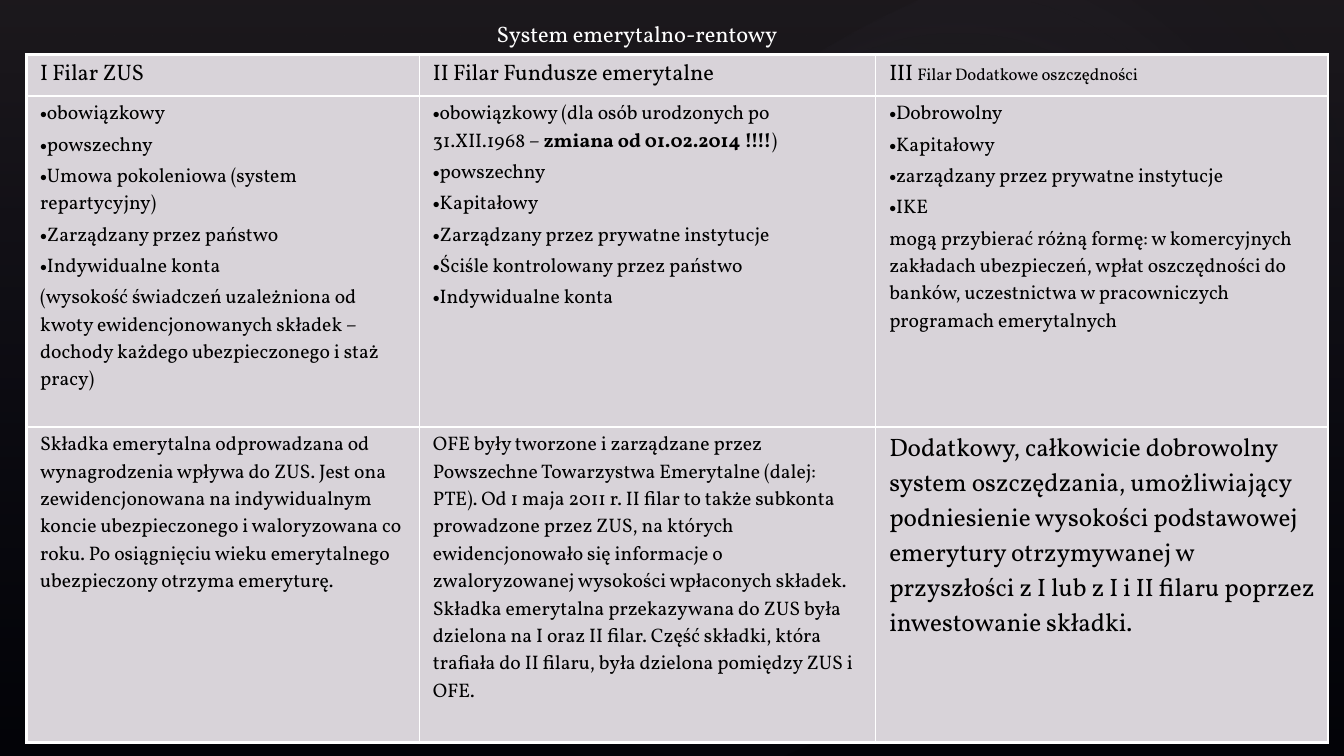
from lxml.etree import SubElement
from pptx import Presentation
from pptx.dml.color import RGBColor
from pptx.enum.shapes import MSO_SHAPE as Shape
from pptx.enum.text import MSO_ANCHOR as Anchor, MSO_AUTO_SIZE as Fit, PP_ALIGN as Align
from pptx.oxml.ns import qn
from pptx.util import Cm, Pt

FONT = "Vollkorn"
WHITE = RGBColor(0xFF, 0xFF, 0xFF)
BLACK = RGBColor(0x00, 0x00, 0x00)
PANEL = RGBColor(0xD8, 0xD3, 0xD9)
DUSK = RGBColor(0x50, 0x46, 0x52)
NAVY = RGBColor(0x24, 0x28, 0x52)
MIST = RGBColor(0xC4, 0xBC, 0xC6)

WIDE, HIGH = 33.87, 19.05
TITLE = "System emerytalno-rentowy"
COLS = [9.9, 11.5, 11.4]
ROWS = [1.05, 8.34, 7.95]
BULLET = "•"

# Each glow: left, top, width, height, rotation, opacity of its centre
GLOWS = [
    (5.08, 2.9, 26.82, 15.85, 328.7, 7),
    (1.55, 1.17, 15.39, 16.59, 294.3, 8),
    (12.14, 0.33, 24, 13.21, 328.7, 8),
]

# Each cell: text size, then its paragraphs; a paragraph is a text
# or a list of (text, font settings) runs.
CELLS = [
    [
        (16, ["I Filar ZUS"]),
        (16, ["II Filar Fundusze emerytalne"]),
        (16, [[("III ", {}), ("Filar Dodatkowe oszczędności", {"size": Pt(12)})]]),
    ],
    [
        (14, [
            "•obowiązkowy",
            "•powszechny",
            "•Umowa pokoleniowa (system repartycyjny)",
            "•Zarządzany przez państwo",
            "•Indywidualne konta",
            "(wysokość świadczeń uzależniona od kwoty ewidencjonowanych składek – "
            "dochody każdego ubezpieczonego i staż pracy)",
        ]),
        (14, [
            [("•obowiązkowy (dla osób urodzonych po 31.XII.1968 – ", {}),
             ("zmiana od 01.02.2014 !!!!", {"bold": True}), (")", {})],
            "•powszechny",
            "•Kapitałowy",
            "•Zarządzany przez prywatne instytucje",
            "•Ściśle kontrolowany przez państwo",
            "•Indywidualne konta",
        ]),
        (14, [
            "•Dobrowolny",
            "•Kapitałowy",
            "•zarządzany przez prywatne instytucje",
            "•IKE",
            "mogą przybierać różną formę: w komercyjnych zakładach ubezpieczeń, "
            "wpłat oszczędności do banków, uczestnictwa w pracowniczych "
            "programach emerytalnych",
        ]),
    ],
    [
        (14, [
            "Składka emerytalna odprowadzana od wynagrodzenia wpływa do ZUS. "
            "Jest ona zewidencjonowana na indywidualnym koncie ubezpieczonego "
            "i waloryzowana co roku. Po osiągnięciu wieku emerytalnego "
            "ubezpieczony otrzyma emeryturę.",
        ]),
        (14, [
            "OFE były tworzone i zarządzane przez Powszechne Towarzystwa "
            "Emerytalne (dalej: PTE). Od 1 maja 2011 r. II filar to także "
            "subkonta prowadzone przez ZUS, na których ewidencjonowało się "
            "informacje o zwaloryzowanej wysokości wpłaconych składek. Składka "
            "emerytalna przekazywana do ZUS była dzielona na I oraz II filar. "
            "Część składki, która trafiała do II filaru, była dzielona "
            "pomiędzy ZUS i OFE.",
        ]),
        (18, [
            "Dodatkowy, całkowicie dobrowolny system oszczędzania, "
            "umożliwiający podniesienie wysokości podstawowej emerytury "
            "otrzymywanej w przyszłości z I lub z I i II filaru poprzez "
            "inwestowanie składki.",
        ]),
    ],
]


def set_font(font, size, color):
    font.name, font.size, font.color.rgb = FONT, Pt(size), color


def add_haze(slide, kind, box, stops):
    """Add a borderless shape with a see-through gradient of (place, colour, opacity)."""
    shape = slide.shapes.add_shape(kind, *map(Cm, box))
    shape.shadow.inherit = False
    shape.line.fill.background()
    shape.fill.gradient()
    grad = shape._element.spPr.find(qn("a:gradFill"))
    for part in list(grad):
        grad.remove(part)
    group = SubElement(grad, qn("a:gsLst"))
    for place, color, alpha in stops:
        stop = SubElement(group, qn("a:gs"), pos=str(place * 1000))
        tint = SubElement(stop, qn("a:srgbClr"), val=str(color))
        SubElement(tint, qn("a:alpha"), val=str(alpha * 1000))
    if kind == Shape.OVAL:
        way = SubElement(grad, qn("a:path"), path="circle")
        SubElement(way, qn("a:fillToRect"), dict.fromkeys("ltrb", "50000"))
    else:
        SubElement(grad, qn("a:lin"), ang="5400000", scaled="0")
    return shape


def paint_back(slide):
    fill = slide.background.fill
    fill.solid()
    fill.fore_color.rgb = BLACK
    add_haze(slide, Shape.RECTANGLE, (0, 0, WIDE, HIGH), [(0, DUSK, 36), (100, NAVY, 10)])
    for *box, turn, alpha in GLOWS:
        glow = add_haze(slide, Shape.OVAL, box, [(0, MIST, alpha), (58, NAVY, 0)])
        glow.rotation = turn


def add_title(slide):
    title = slide.shapes.title
    slide.shapes._spTree.append(title._element)
    title.left, title.top, title.width, title.height = Cm(3.33), Cm(0.31), Cm(25.45), Cm(1)
    frame = title.text_frame
    frame.auto_size, frame.vertical_anchor = Fit.NONE, Anchor.BOTTOM
    frame.text = TITLE
    para = frame.paragraphs[0]
    para.alignment = Align.CENTER
    set_font(para.font, 16, WHITE)


def add_para(para, runs, size, first):
    if isinstance(runs, str):
        runs = [(runs, {})]
    if runs[0][0].startswith(BULLET):
        props = para._p.get_or_add_pPr()
        props.set("marL", "0")
        props.set("indent", "0")
        SubElement(props, qn("a:buFont"), typeface="Arial")
        SubElement(props, qn("a:buChar"), char=BULLET)
    if not first:
        para.space_before = Pt(size * 0.2)
    set_font(para.font, size, BLACK)
    for text, extra in runs:
        run = para.add_run()
        run.text = text.removeprefix(BULLET)
        for name, value in extra.items():
            setattr(run.font, name, value)


def add_edges(cell, row, col):
    """Draw white cell borders, thicker along the outside of the table."""
    outer = {"L": col == 0, "R": col == len(COLS) - 1,
             "T": row == 0, "B": row == len(ROWS) - 1}
    props = cell._tc.get_or_add_tcPr()
    for side, thick in outer.items():
        line = SubElement(props, qn(f"a:ln{side}"), w=str(Pt(2.25 if thick else 1)))
        SubElement(SubElement(line, qn("a:solidFill")), qn("a:srgbClr"), val=str(WHITE))


def fill_cell(cell, row, col):
    size, paras = CELLS[row][col]
    cell.margin_left = cell.margin_right = Cm(0.34)
    cell.margin_top = cell.margin_bottom = Cm(0.13)
    add_edges(cell, row, col)
    cell.fill.solid()
    cell.fill.fore_color.rgb = PANEL
    frame = cell.text_frame
    for i, runs in enumerate(paras):
        para = frame.add_paragraph() if i else frame.paragraphs[0]
        add_para(para, runs, size, i == 0)


def add_grid(slide):
    table = slide.shapes.add_table(len(ROWS), len(COLS), Cm(0.67), Cm(1.37),
                                   Cm(sum(COLS)), Cm(sum(ROWS))).table
    table.first_row = table.horz_banding = False
    for col, width in zip(table.columns, COLS):
        col.width = Cm(width)
    for row, height in zip(table.rows, ROWS):
        row.height = Cm(height)
    for row in range(len(ROWS)):
        for col in range(len(COLS)):
            fill_cell(table.cell(row, col), row, col)


def main():
    deck = Presentation()
    deck.slide_width, deck.slide_height = Cm(WIDE), Cm(HIGH)
    slide = deck.slides.add_slide(deck.slide_layouts[5])
    paint_back(slide)
    add_title(slide)
    add_grid(slide)
    deck.save("out.pptx")


if __name__ == "__main__":
    main()
